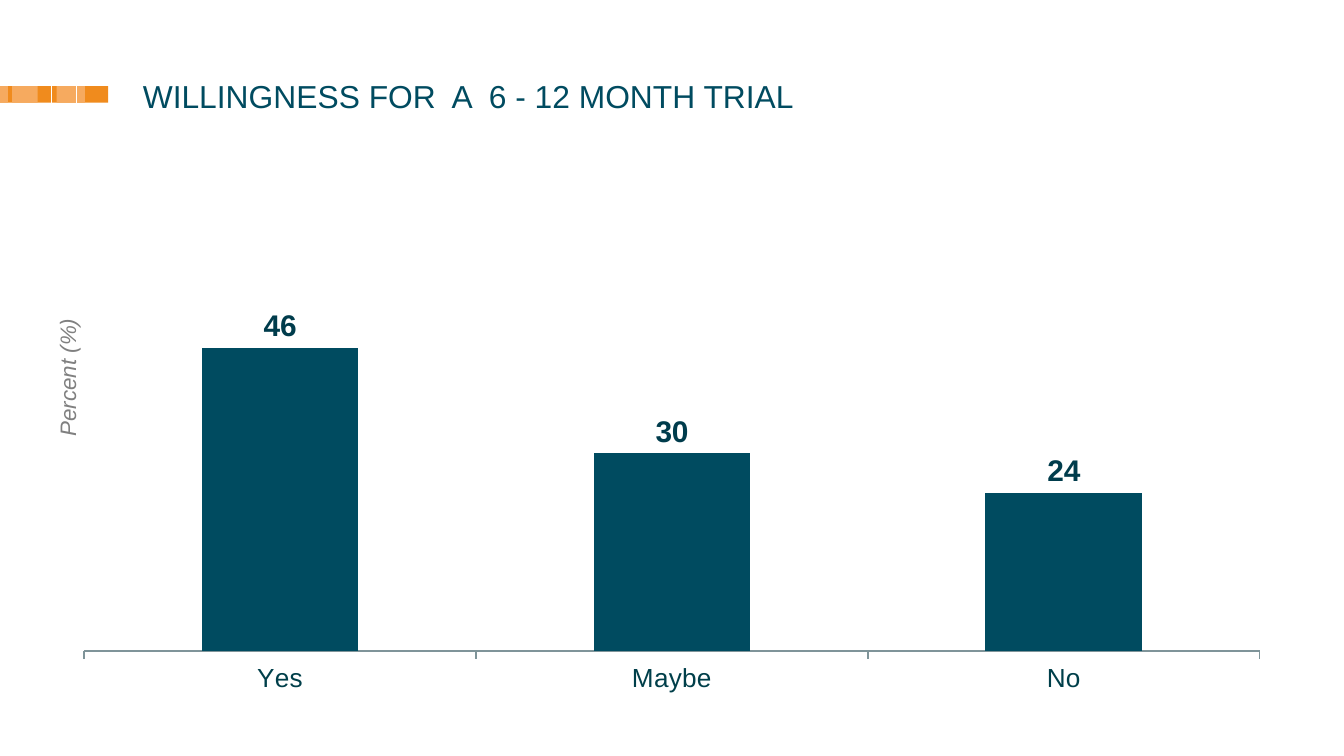
from lxml import etree
from pptx import Presentation
from pptx import util as u
from pptx.chart import data as chart_data
from pptx.dml import color
from pptx.enum import chart as ch
from pptx.enum import shapes, text
from pptx.oxml import ns

Pt = u.Pt
FONT = "Arial"
TEAL = "004B60"
ORANGE = "F08B1D"
PALE_ORANGE = "F6AA5F"


def rgb(value):
    """Turn a hex string into a colour."""
    return color.RGBColor.from_string(value)


def style_font(font, size, hex_color, bold=False, italic=False):
    """Set the typeface, size, colour and emphasis of a font."""
    font.name, font.size = FONT, Pt(size)
    font.bold, font.italic = bold, italic
    font.color.rgb = rgb(hex_color)


def set_text(shape, words, size, hex_color, align, italic=False):
    """Write one tightly spaced paragraph without margins."""
    frame = shape.text_frame
    frame.text = words
    frame.word_wrap = True
    frame.auto_size = text.MSO_AUTO_SIZE.NONE
    frame.vertical_anchor = text.MSO_ANCHOR.TOP
    frame.margin_left = frame.margin_right = frame.margin_top = frame.margin_bottom = 0
    para = frame.paragraphs[0]
    para.alignment = align
    para.line_spacing = 0.85
    para.space_before, para.space_after = Pt(0), Pt(12)
    style_font(para.runs[0].font, size, hex_color, italic=italic)


def add_accent(page, left, top, width, height):
    """Draw the striped orange strip at the page edge."""
    bands = [(0, width, ORANGE), (30.4, 15.1, PALE_ORANGE),
             (6.5, 13.7, PALE_ORANGE), (0, 4.3, PALE_ORANGE)]
    for offset, band_width, fill in bands:
        band = page.shapes.add_shape(shapes.MSO_SHAPE.RECTANGLE, Pt(left + offset),
                                     Pt(top), Pt(band_width), Pt(height))
        band.shadow.inherit = False
        band.fill.solid()
        band.fill.fore_color.rgb = rgb(fill)
        band.line.fill.background()
    for offset in (27.4, 41.2):
        x = Pt(left + offset)
        divider = page.shapes.add_connector(shapes.MSO_CONNECTOR.STRAIGHT, x, Pt(top),
                                            x, Pt(top + height))
        divider.line.color.rgb = rgb("FFFFFF")
        divider.line.width = Pt(0.63)
        etree.SubElement(divider._element.spPr, ns.qn("a:effectLst"))


def add_title(page, left, top, width, height):
    """Place and format the title placeholder."""
    title = page.shapes.title
    title.left, title.top, title.width, title.height = map(Pt, (left, top, width, height))
    set_text(title, "WILLINGNESS FOR  A  6 - 12 MONTH TRIAL", 17, TEAL, text.PP_ALIGN.LEFT)


def set_plot_layout(chart, x, y, w, h):
    """Fix the inner plot area as fractions of the chart."""
    area = chart._chartSpace.chart.plotArea
    for old in area.findall(ns.qn("c:layout")):
        area.remove(old)
    layout = etree.Element(ns.qn("c:layout"))
    manual = etree.SubElement(layout, ns.qn("c:manualLayout"))
    settings = {"layoutTarget": "inner", "xMode": "edge", "yMode": "edge",
                "x": x, "y": y, "w": w, "h": h}
    for tag, value in settings.items():
        etree.SubElement(manual, ns.qn(f"c:{tag}")).set("val", str(value))
    area.insert(0, layout)


def add_answer_chart(page, left, top, width, height):
    """Add the column chart of answers."""
    data = chart_data.CategoryChartData(number_format="0")
    data.categories = ["Yes", "Maybe", "No"]
    data.add_series("Series 1", [46, 30, 24])
    chart = page.shapes.add_chart(ch.XL_CHART_TYPE.COLUMN_CLUSTERED, Pt(left), Pt(top),
                                  Pt(width), Pt(height), data).chart
    chart.has_title = chart.has_legend = False
    style_font(chart.font, 14, "003F4A")
    set_plot_layout(chart, 0.017, 0.131, 0.966, 0.773)

    values = chart.value_axis
    values.minimum_scale, values.maximum_scale, values.major_unit = 0, 70, 10
    values.has_major_gridlines = False
    values.visible = False
    answers = chart.category_axis
    answers.has_major_gridlines = False
    answers.major_tick_mark = ch.XL_TICK_MARK.OUTSIDE
    answers.format.line.color.rgb = rgb("7F9499")
    answers.format.line.width = Pt(0.75)

    plot = chart.plots[0]
    plot.gap_width, plot.overlap = 150, -16
    plot.vary_by_categories = False
    columns = plot.series[0]
    columns.format.fill.solid()
    columns.format.fill.fore_color.rgb = rgb(TEAL)
    labels = columns.data_labels
    labels.show_value = True
    labels.position = ch.XL_LABEL_POSITION.OUTSIDE_END
    labels.number_format, labels.number_format_is_linked = "0", False
    style_font(labels.font, 16, "003C4C", bold=True)


def add_axis_caption(page, left, top, width, height):
    """Add the caption that reads upwards beside the chart."""
    box = page.shapes.add_textbox(Pt(left), Pt(top), Pt(width), Pt(height))
    set_text(box, "Percent (%)", 12, "808080", text.PP_ALIGN.CENTER, italic=True)
    box.text_frame._txBody.bodyPr.set("vert", "vert270")


def main():
    """Build the slide and save it."""
    deck = Presentation()
    deck.slide_width, deck.slide_height = Pt(720), Pt(405)
    page = deck.slides.add_slide(deck.slide_layouts[5])
    add_accent(page, 0, 46.2, 58, 8.8)
    add_title(page, 76.5, 44, 672, 36)
    add_answer_chart(page, 34, 59.8, 652, 319.7)
    add_axis_caption(page, 31, 161.3, 22.3, 82)
    deck.save("out.pptx")


if __name__ == "__main__":
    main()
